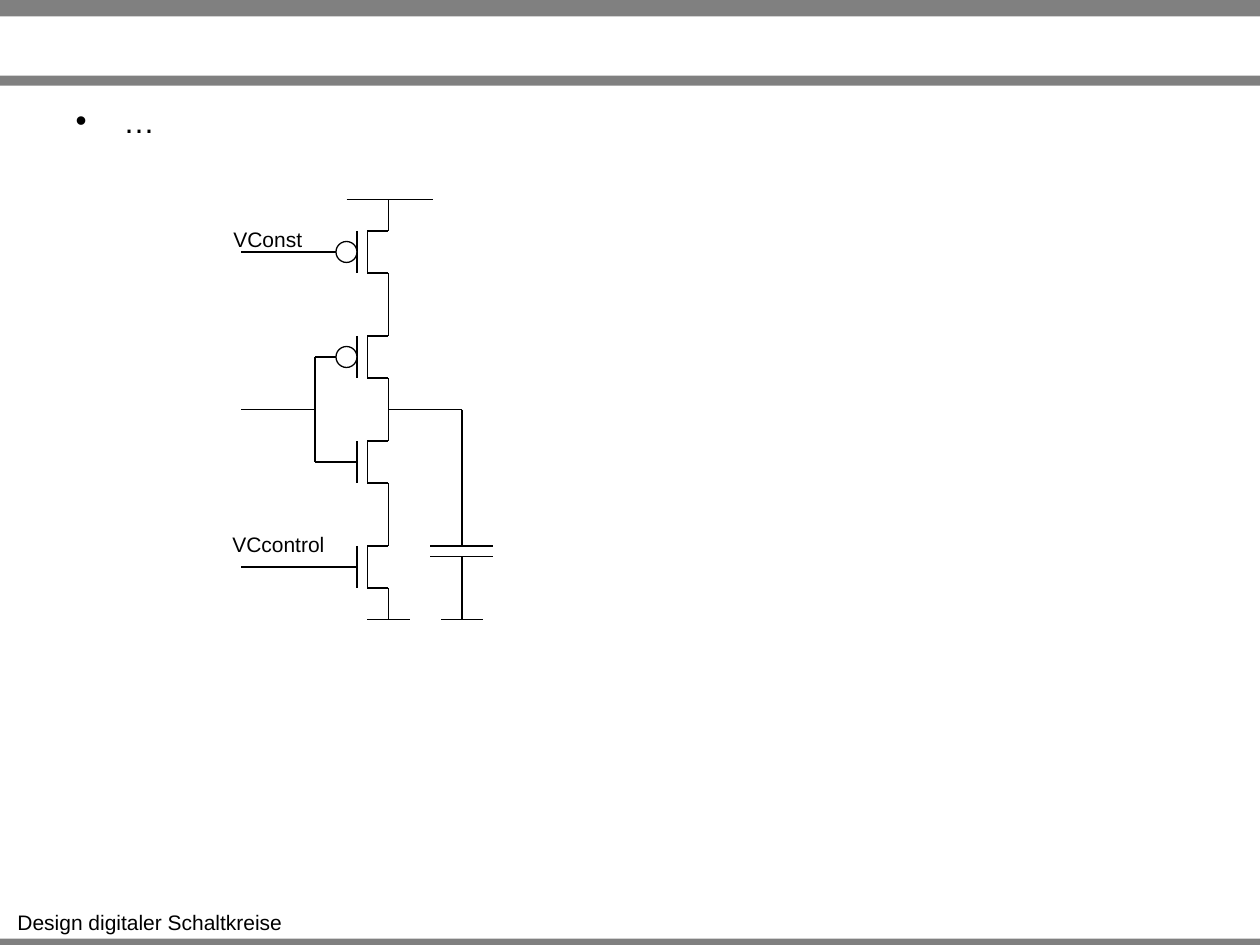
from pptx import Presentation
from pptx import util as u
from pptx.dml.color import RGBColor
from pptx.enum import shapes, text
from pptx.oxml import xmlchemy
from lxml import etree

BLACK, WHITE, GRAY = "000000", "FFFFFF", "808080"
FONT = "Arial"
DRAWING = "{http://schemas.openxmlformats.org/drawingml/2006/main}"


def colour(hex_code):
    return RGBColor.from_string(hex_code)


def grid(steps):
    """Circuit grid: twelve steps to the inch."""
    return u.Inches(steps / 12)


def write(para, words, size=12, ink=BLACK, align=None):
    para.alignment = align
    span = para.add_run()
    span.text = words
    span.font.size = u.Pt(size)
    span.font.name = FONT
    span.font.color.rgb = colour(ink)


class CircuitSlide:
    line_width = u.Pt(0.75)

    def __init__(self, deck):
        # The slide has a body but no title
        self.slide = deck.slides.add_slide(deck.slide_layouts[1])
        title = self.slide.shapes.title
        title.element.getparent().remove(title.element)

    def bar(self, top, height):
        bar = self.slide.shapes.add_shape(
            shapes.MSO_SHAPE.RECTANGLE, 0, u.Inches(top), u.Inches(10), u.Inches(height))
        bar.shadow.inherit = False
        bar.fill.solid()
        bar.fill.fore_color.rgb = colour(GRAY)
        bar.line.fill.background()

    def label(self, words, left, top, width):
        box = self.slide.shapes.add_textbox(
            u.Inches(left), u.Inches(top), u.Inches(width), u.Inches(0.3))
        frame = box.text_frame
        frame.word_wrap = False
        frame.auto_size = text.MSO_AUTO_SIZE.SHAPE_TO_FIT_TEXT
        write(frame.paragraphs[0], words, align=text.PP_ALIGN.CENTER)

    def bullet(self, words, left, top, width, height):
        body = self.slide.placeholders[1]
        body.left, body.top = u.Inches(left), u.Inches(top)
        body.width, body.height = u.Inches(width), u.Inches(height)
        para = body.text_frame.paragraphs[0]
        para.space_before = u.Pt(0)
        properties = para._p.get_or_add_pPr()
        properties.set("marL", str(u.Inches(0.38)))
        properties.set("indent", str(-u.Inches(0.38)))
        etree.SubElement(properties, DRAWING + "buChar").set("char", "•")
        write(para, words, size=18)

    def wire(self, x1, y1, x2, y2, group=None):
        parent = group or self.slide
        wire = parent.shapes.add_connector(
            shapes.MSO_CONNECTOR.STRAIGHT, grid(x1), grid(y1), grid(x2), grid(y2))
        wire.line.color.rgb = colour(BLACK)
        wire.line.width = self.line_width
        etree.SubElement(wire._element.spPr, DRAWING + "effectLst")

    def transistor(self, middle, p_type):
        group = self.slide.shapes.add_group_shape()
        self.wire(30, middle, 32, middle, group)
        self.wire(32, middle, 34, middle, group)
        for x in (34, 35):  # gate and channel
            self.wire(x, middle - 2, x, middle + 2, group)
        for side in (-1, 1):  # source and drain
            self.wire(35, middle + 2 * side, 37, middle + 2 * side, group)
            self.wire(37, middle + 2 * side, 37, middle + 5 * side, group)
        if p_type:
            bubble = group.shapes.add_shape(
                shapes.MSO_SHAPE.OVAL, grid(32), grid(middle - 1), grid(2), grid(2))
            bubble.shadow.inherit = False
            bubble.fill.solid()
            bubble.fill.fore_color.rgb = colour(WHITE)
            bubble.line.color.rgb = colour(BLACK)
            bubble.line.width = self.line_width


def main():
    deck = Presentation()
    deck.slide_width, deck.slide_height = u.Inches(10), u.Inches(7.5)
    page = CircuitSlide(deck)

    # Frame, footer and body
    for top, height in ((7.45, 0.08), (0, 0.13), (0.6, 0.08)):
        page.bar(top, height)
    page.label("Design digitaler Schaltkreise", 0.03, 7.17, 2.32)
    page.bullet("…", 0.5, 0.76, 9, 0.99)

    # Stack of four transistors
    for index, p_type in enumerate((True, True, False, False)):
        page.transistor(24 + 10 * index, p_type)

    # Supply rail and ground
    page.wire(33, 19, 41.25, 19)
    page.wire(35, 59, 39, 59)

    # Inputs
    for y in (24, 39, 54):
        page.wire(23, y, 30, y)
    page.wire(30, 34, 30, 44)

    # Output with load capacitor
    page.wire(37, 39, 44, 39)
    page.wire(44, 39, 44, 52)
    for y in (52, 53):
        page.wire(41, y, 47, y)
    page.wire(44, 53, 44, 59)
    page.wire(42, 59, 46, 59)

    # Names of the control inputs
    page.label("VCcontrol", 1.74, 4.17, 0.94)
    page.label("VConst", 1.75, 1.75, 0.75)

    deck.save("out.pptx")


if __name__ == "__main__":
    main()
